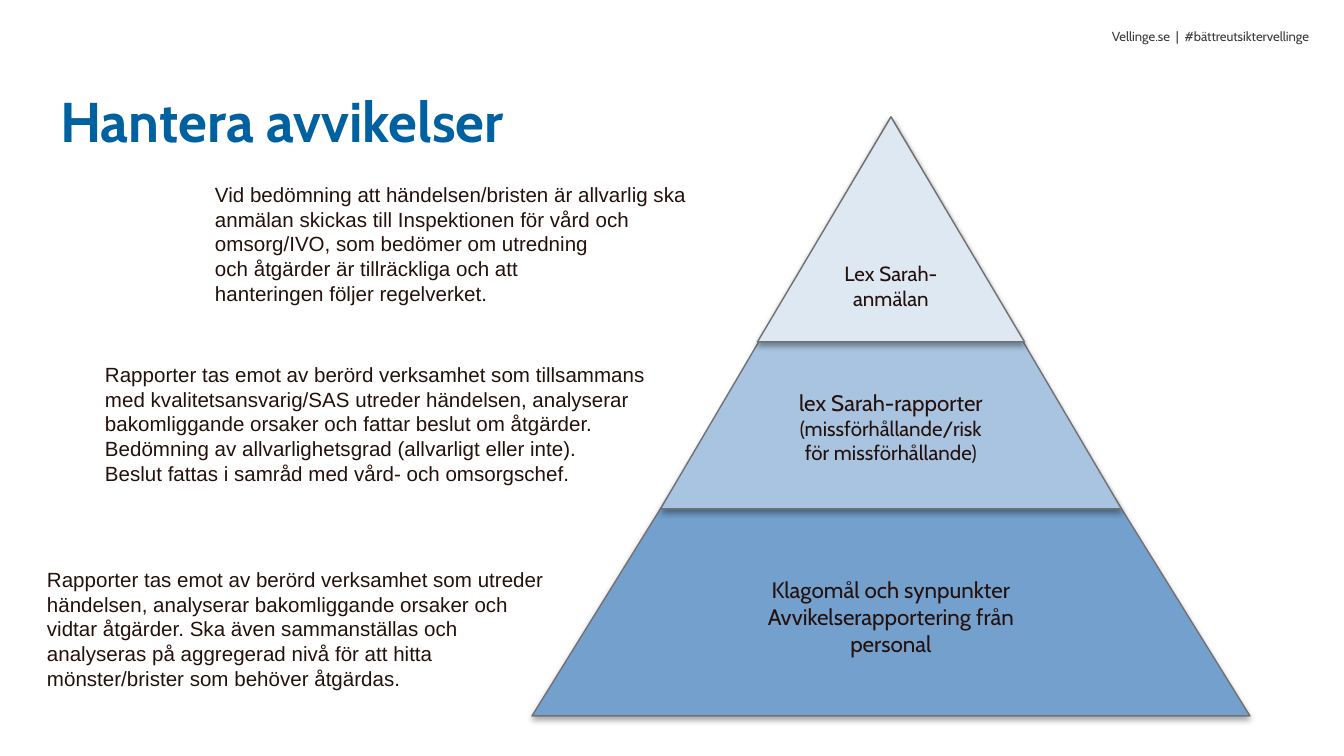
from lxml.etree import SubElement
from pptx import Presentation
from pptx.dml.color import RGBColor
from pptx.enum.shapes import MSO_SHAPE
from pptx.enum.text import MSO_ANCHOR, PP_ALIGN
from pptx.oxml.ns import qn
from pptx.util import Emu, Pt

EMU_PER_PX = 914400 / 134.4
COLORS = {
    "title": "0061A1",
    "header": "3A3A3B",
    "text": "24100C",
    "outline": "717173",
    "base": "74A0CD",
    "middle": "A8C4E0",
    "top": "DDE8F3",
    "shadow": "000000",
}


def px(n):
    return Emu(round(n * EMU_PER_PX))


def rgb(name):
    return RGBColor.from_string(COLORS[name])


class SlideBuilder:
    def __init__(self, slide):
        self.slide = slide

    def fill_text(self, tf, paragraphs, insets, font, color="text",
                  bold=False, align=PP_ALIGN.LEFT):
        """Each paragraph is a list of (text, size) runs."""
        tf.word_wrap = True
        tf.margin_left, tf.margin_top, tf.margin_right, tf.margin_bottom = map(px, insets)
        for i, runs in enumerate(paragraphs):
            p = tf.paragraphs[0] if i == 0 else tf.add_paragraph()
            p.alignment = align
            for text, size in runs:
                r = p.add_run()
                r.text = text
                r.font.name = font
                r.font.size = Pt(size)
                r.font.bold = bold
                r.font.color.rgb = rgb(color)

    def text(self, x, y, w, h, paragraphs, insets=(0, 0, 0, 0), font="Cabin", **style):
        sp = self.slide.shapes.add_textbox(px(x), px(y), px(w), px(h))
        self.fill_text(sp.text_frame, paragraphs, insets, font, **style)

    def note(self, x, y, w, lines):
        self.text(x, y, w, 145, [[(line, 11)] for line in lines],
                  insets=(0, 7, 13, 0), font="Arial")

    def tier(self, apex_x, y, w, h, fill, paragraphs, top_inset=7):
        sp = self.slide.shapes.add_shape(
            MSO_SHAPE.ISOSCELES_TRIANGLE, px(apex_x - w / 2), px(y), px(w), px(h))
        sp.fill.solid()
        sp.fill.fore_color.rgb = rgb(fill)
        sp.line.color.rgb = rgb("outline")
        sp.line.width = Pt(0.75)
        self.soft_shadow(sp)
        sp.text_frame.vertical_anchor = MSO_ANCHOR.MIDDLE
        self.fill_text(sp.text_frame, paragraphs, (14, top_inset, 14, 7), "Cabin",
                       align=PP_ALIGN.CENTER)

    def soft_shadow(self, sp):
        sp.shadow.inherit = False
        effects = sp.element.spPr.find(qn("a:effectLst"))
        shadow = SubElement(effects, qn("a:outerShdw"), blurRad=str(Pt(3.1)),
                            dist=str(Pt(1.8)), dir="5400000", rotWithShape="0")
        color = SubElement(shadow, qn("a:srgbClr"), val=COLORS["shadow"])
        SubElement(color, qn("a:alpha"), val="35000")


def main():
    prs = Presentation()
    prs.slide_width, prs.slide_height = px(1344), px(756)
    s = SlideBuilder(prs.slides.add_slide(prs.slide_layouts[6]))

    # Header and title
    s.text(1089, 28, 220, 16, [[("Vellinge.se  |  #bättreutsiktervellinge", 7)]],
           color="header", align=PP_ALIGN.RIGHT)
    s.text(60, 87, 1220, 67, [[("Hantera avvikelser", 30)]], color="title", bold=True)

    # Pyramid: overlapping triangles on one axis, largest at the back
    apex_x = 891
    s.tier(apex_x, 137, 718, 579, "base",
           [[("Klagomål och synpunkter", 12)],
            [("Avvikelserapportering från personal", 12)]], top_inset=98)
    s.tier(apex_x, 117, 461, 392, "middle",
           [[("lex Sarah-rapporter ", 12),
             ("(missförhållande/risk för missförhållande)", 11)]], top_inset=39)
    s.tier(apex_x, 117, 267, 225, "top", [[("Lex Sarah-anmälan", 11)]])

    # Explanations beside each tier
    s.note(47, 560, 543, [
        "Rapporter tas emot av berörd verksamhet som utreder händelsen, "
        "analyserar bakomliggande orsaker och",
        "vidtar åtgärder. Ska även sammanställas och",
        "analyseras på aggregerad nivå för att hitta",
        "mönster/brister som behöver åtgärdas.",
    ])
    s.note(105, 355, 591, [
        "Rapporter tas emot av berörd verksamhet som tillsammans med "
        "kvalitetsansvarig/SAS utreder händelsen, analyserar bakomliggande "
        "orsaker och fattar beslut om åtgärder. Bedömning av "
        "allvarlighetsgrad (allvarligt eller inte).",
        "Beslut fattas i samråd med vård- och omsorgschef.",
    ])
    s.note(215, 175, 500, [
        "Vid bedömning att händelsen/bristen är allvarlig ska anmälan skickas "
        "till Inspektionen för vård och omsorg/IVO, som bedömer om utredning",
        "och åtgärder är tillräckliga och att",
        "hanteringen följer regelverket.",
    ])

    prs.save("out.pptx")


if __name__ == "__main__":
    main()
